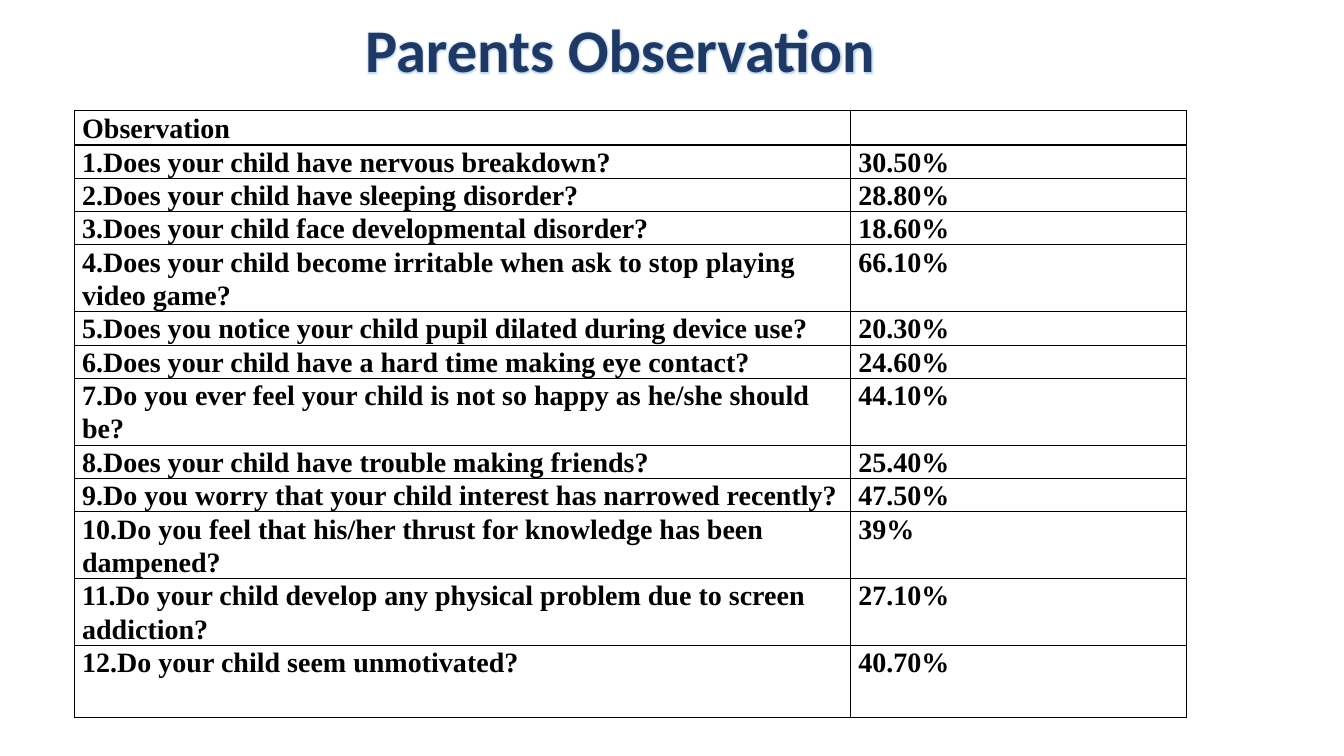
from lxml import etree
from pptx import Presentation
from pptx.dml.color import RGBColor
from pptx.enum import text
from pptx.oxml import parse_xml
from pptx.oxml.ns import nsdecls, qn
from pptx.util import Pt

NAVY = RGBColor(0x20, 0x38, 0x64)
BLACK = RGBColor(0, 0, 0)
GLOW = RGBColor(0x5B, 0x9B, 0xD5)

LINE, TWO_LINES, LAST = 23.8, 47.8, 51.4
ROWS = [
    ("Observation", "", 24.4),
    ("1.Does your child have nervous breakdown?", "30.50%", LINE),
    ("2.Does your child have sleeping disorder?", "28.80%", LINE),
    ("3.Does your child face developmental disorder?", "18.60%", LINE),
    ("4.Does your child become irritable when ask to stop playing video game?",
     "66.10%", TWO_LINES),
    ("5.Does you notice your child pupil dilated during device use?", "20.30%", LINE),
    ("6.Does your child have a hard time making eye contact?", "24.60%", LINE),
    ("7.Do you ever feel your child is not so happy as he/she should be?",
     "44.10%", TWO_LINES),
    ("8.Does your child have trouble making friends?", "25.40%", LINE),
    ("9.Do you worry that your child interest has narrowed recently?", "47.50%", LINE),
    ("10.Do you feel that his/her thrust for knowledge has been dampened?",
     "39%", TWO_LINES),
    ("11.Do your child develop any physical problem due to screen addiction?",
     "27.10%", TWO_LINES),
    ("12.Do your child seem unmotivated?", "40.70%", LAST),
]
COLUMN_WIDTHS = [554.4, 239.8]


def add_span(para, words, font_name, size, color):
    span = para.add_run()
    span.text = words
    span.font.name = font_name
    span.font.size = Pt(size)
    span.font.bold = True
    span.font.color.rgb = color
    return span


def add_borders(cell):
    properties = cell._tc.get_or_add_tcPr()
    for index, side in enumerate(("lnL", "lnR", "lnT", "lnB")):
        border = parse_xml(
            f'<a:{side} {nsdecls("a")} w="{Pt(1)}"><a:solidFill>'
            f'<a:srgbClr val="{BLACK}"/></a:solidFill></a:{side}>')
        properties.insert(index, border)


deck = Presentation()
deck.slide_width, deck.slide_height = Pt(960), Pt(540)
page = deck.slides.add_slide(deck.slide_layouts[5])

title = page.shapes.title
title.left, title.top, title.width, title.height = Pt(23), Pt(31), Pt(840), Pt(33.8)
frame = title.text_frame
frame.word_wrap = True
frame.auto_size = text.MSO_AUTO_SIZE.NONE
frame.vertical_anchor = text.MSO_ANCHOR.BOTTOM
para = frame.paragraphs[0]
para.alignment = text.PP_ALIGN.CENTER
para.line_spacing = 0.9
span = add_span(para, "Parents Observation", "Calibri", 43.2, NAVY)
effects = etree.Element(qn("a:effectLst"))
glow = etree.SubElement(effects, qn("a:glow"), rad=str(Pt(3)))
glow_color = etree.SubElement(glow, qn("a:srgbClr"), val=str(GLOW))
etree.SubElement(glow_color, qn("a:alpha"), val="40000")
span.font._element.find(qn("a:solidFill")).addnext(effects)

table_height = sum(height for _, _, height in ROWS)
table = page.shapes.add_table(
    len(ROWS), len(COLUMN_WIDTHS), Pt(53.3), Pt(79.2),
    Pt(sum(COLUMN_WIDTHS)), Pt(table_height)).table
table.first_row = False
table.horz_banding = False
for column, width in zip(table.columns, COLUMN_WIDTHS):
    column.width = Pt(width)

for row, (question, share, height) in zip(table.rows, ROWS):
    row.height = Pt(height)
    for cell, words in zip(row.cells, (question, share)):
        cell.margin_left = cell.margin_right = Pt(5.4)
        cell.margin_top = cell.margin_bottom = Pt(0)
        cell.fill.background()
        add_borders(cell)
        para = cell.text_frame.paragraphs[0]
        para.line_spacing = 1.07
        if words:
            add_span(para, words, "Times New Roman", 20, BLACK)

deck.save("out.pptx")
